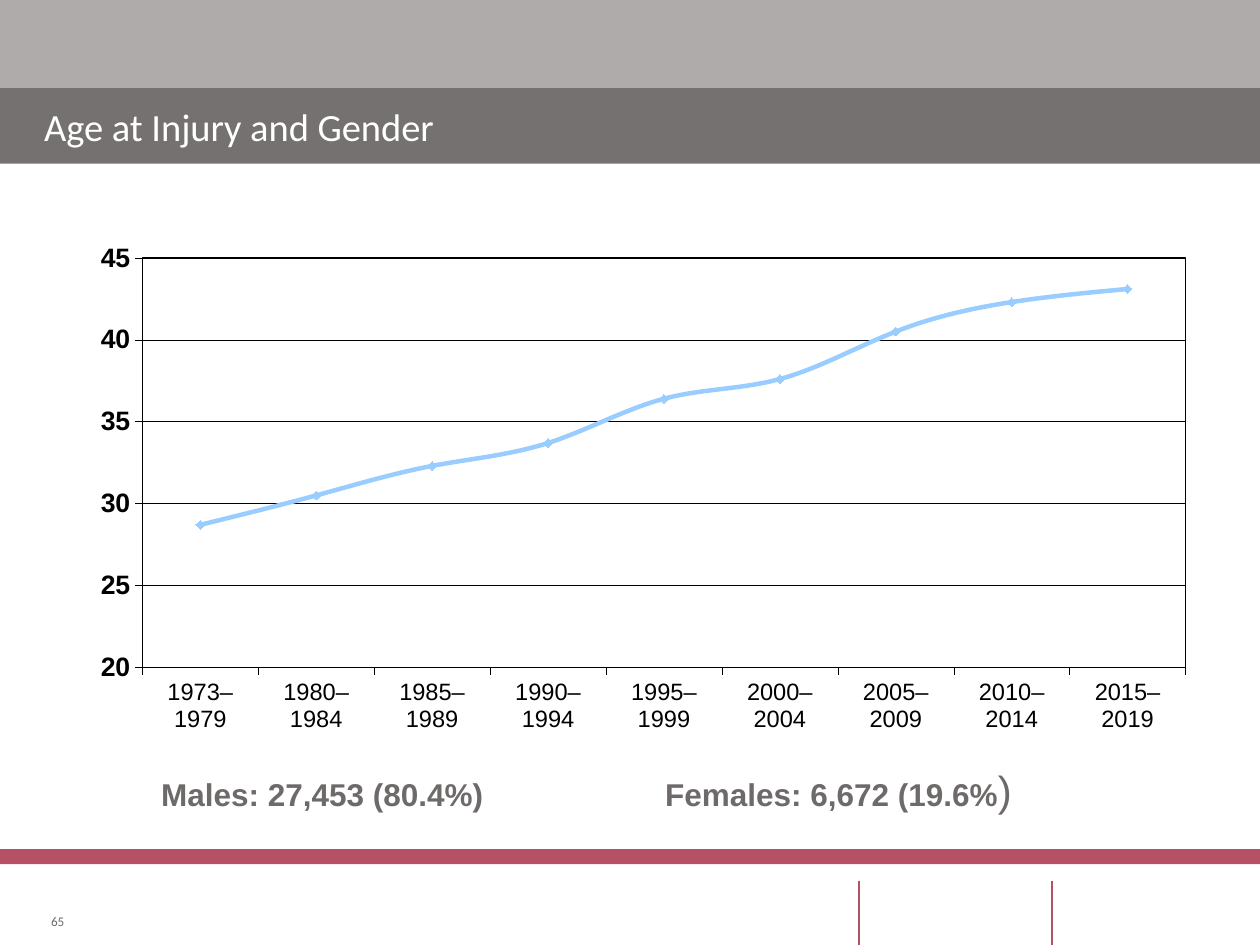
import pptx
import pptx.chart.data
import pptx.dml.color
import pptx.enum.chart
import pptx.enum.shapes
import pptx.enum.text
import pptx.oxml
import pptx.oxml.ns
import pptx.util

Cm = pptx.util.Cm
Pt = pptx.util.Pt
ANCHOR = pptx.enum.text.MSO_ANCHOR
ALIGN = pptx.enum.text.PP_ALIGN
CHART = pptx.enum.chart

ROSE, GREY, BLUE, BLACK = "B65065", "6F6A6A", "99CCFF", "000000"
AGES = {
    "1973–1979": 28.7, "1980–1984": 30.5, "1985–1989": 32.3,
    "1990–1994": 33.7, "1995–1999": 36.4, "2000–2004": 37.6,
    "2005–2009": 40.5, "2010–2014": 42.3, "2015–2019": 43.1,
}
PLOT_LAYOUT = {"x": 0.07, "y": 0.08, "w": 0.92, "h": 0.71}


def paint(color_format, hex_color):
    color_format.rgb = pptx.dml.color.RGBColor.from_string(hex_color)


def set_all(target, values):
    for name, value in values.items():
        setattr(target, name, value)


def set_font(font, hex_color, **values):
    set_all(font, values)
    paint(font.color, hex_color)


def set_line(line, hex_color, width):
    line.width = Pt(width)
    paint(line.color, hex_color)


def frame_values(left=0, right=0, **values):
    return {"margin_left": Cm(left), "margin_right": Cm(right),
            "margin_top": 0, "margin_bottom": 0, **values}


def xml(markup):
    return pptx.oxml.parse_xml(
        markup.replace(">", f" {pptx.oxml.ns.nsdecls('a', 'c')}>", 1))


def add_bands(slide, left, top, width):
    for offset, height, color in [(0, 1.8, "AFABAB"), (1.78, 1.52, "767171"),
                                  (17.12, 0.3, ROSE)]:
        band = slide.shapes.add_shape(
            pptx.enum.shapes.MSO_SHAPE.RECTANGLE,
            Cm(left), Cm(top + offset), Cm(width), Cm(height))
        band.shadow.inherit = False
        band.fill.solid()
        paint(band.fill.fore_color, color)
        band.line.fill.background()


def add_footer(slide, left, top, height, number):
    for offset in (17.32, 21.21):
        divider = slide.shapes.add_connector(
            pptx.enum.shapes.MSO_CONNECTOR.STRAIGHT,
            Cm(left + offset), Cm(top), Cm(left + offset), Cm(top + height))
        set_line(divider.line, ROSE, 1.5)
        divider.element.spPr.append(xml("<a:effectLst></a:effectLst>"))
    page = slide.shapes.add_textbox(
        Cm(left + 0.97), Cm(top + 0.66), Cm(0.33), Cm(0.33)).text_frame
    set_all(page, frame_values(word_wrap=False, vertical_anchor=ANCHOR.BOTTOM))
    paragraph = page.paragraphs[0]
    paragraph.text = number
    paragraph.alignment = ALIGN.RIGHT
    set_font(paragraph.runs[0].font, GREY, name="Calibri", size=Pt(7.5))


def place_title(slide, left, top, width, height, wording):
    title = slide.shapes.title
    title.element.getparent().append(title.element)
    set_all(title, {"left": Cm(left), "top": Cm(top),
                    "width": Cm(width), "height": Cm(height)})
    set_all(title.text_frame, frame_values(
        0.89, 0.89, word_wrap=True, vertical_anchor=ANCHOR.MIDDLE))
    paragraph = title.text_frame.paragraphs[0]
    paragraph.text = wording
    paragraph.alignment = ALIGN.LEFT
    set_font(paragraph.runs[0].font, "FFFFFF", name="Calibri", size=Pt(22),
             bold=False)


def frame_plot(chart):
    plot_area = chart.element.xpath("c:chart/c:plotArea")[0]
    for layout in plot_area.xpath("c:layout"):
        plot_area.remove(layout)
    edges = "".join(f'<c:{side} val="{share}"/>'
                    for side, share in PLOT_LAYOUT.items())
    plot_area.insert(0, xml(
        '<c:layout><c:manualLayout><c:layoutTarget val="inner"/>'
        '<c:xMode val="edge"/><c:yMode val="edge"/>'
        f'{edges}</c:manualLayout></c:layout>'))
    plot_area.append(xml(
        '<c:spPr><a:noFill/><a:ln w="12700"><a:solidFill>'
        f'<a:srgbClr val="{BLACK}"/></a:solidFill></a:ln></c:spPr>'))


def add_age_chart(slide, left, top, width, height):
    age_data = pptx.chart.data.CategoryChartData()
    age_data.categories = list(AGES)
    age_data.add_series("Series 1", list(AGES.values()))
    chart = slide.shapes.add_chart(
        CHART.XL_CHART_TYPE.LINE_MARKERS,
        Cm(left), Cm(top), Cm(width), Cm(height), age_data).chart
    set_all(chart, {"has_title": False, "has_legend": False})
    set_font(chart.font, BLACK, name="Arial", size=Pt(15.2), bold=True)

    for axis, size, bold in [(chart.category_axis, 13.5, False),
                             (chart.value_axis, 15.2, True)]:
        set_all(axis, {"major_tick_mark": CHART.XL_TICK_MARK.OUTSIDE,
                       "minor_tick_mark": CHART.XL_TICK_MARK.NONE})
        set_line(axis.format.line, BLACK, 0.21)
        set_font(axis.tick_labels.font, BLACK, name="Arial", size=Pt(size),
                 bold=bold)
    set_all(chart.value_axis, {"minimum_scale": 20, "maximum_scale": 45,
                               "major_unit": 5, "has_major_gridlines": True})
    set_line(chart.value_axis.major_gridlines.format.line, BLACK, 0.21)

    chart.plots[0].vary_by_categories = False
    age_series = chart.plots[0].series[0]
    age_series.smooth = True
    set_line(age_series.format.line, BLUE, 2.54)
    marker = age_series.marker
    set_all(marker, {"style": CHART.XL_MARKER_STYLE.DIAMOND, "size": 5})
    marker.format.fill.solid()
    paint(marker.format.fill.fore_color, BLUE)
    paint(marker.format.line.color, BLUE)
    frame_plot(chart)


def add_gender_counts(slide, left, top, width, height):
    counts = slide.shapes.add_textbox(
        Cm(left), Cm(top), Cm(width), Cm(height)).text_frame
    set_all(counts, frame_values(1.52, 0.25, word_wrap=True,
                                 margin_top=Cm(0.13)))
    paragraph = counts.paragraphs[0]
    stops = "".join(f'<a:tab pos="{Cm(stop)}" algn="l"/>'
                    for stop in (7.62, 10.16))
    paragraph.alignment = ALIGN.LEFT
    paragraph.runs
    paragraph._p.get_or_add_pPr().append(xml(f"<a:tabLst>{stops}</a:tabLst>"))
    for wording, size, bold in [
            ("Males: 27,453 (80.4%) \t\tFemales: 6,672 (19.6%", 18, True),
            (")", 24, False)]:
        run = paragraph.add_run()
        run.text = wording
        set_font(run.font, GREY, name="Arial", size=Pt(size), bold=bold)


def main():
    deck = pptx.Presentation()
    set_all(deck, {"slide_width": Cm(25.4), "slide_height": Cm(19.05)})
    slide = deck.slides.add_slide(deck.slide_layouts.get_by_name("Title Only"))
    add_bands(slide, 0, 0, 25.4)
    add_footer(slide, 0, 17.75, 1.3, "65")
    place_title(slide, 0, 1.78, 25.4, 1.52, "Age at Injury and Gender")
    add_age_chart(slide, 1.27, 4.27, 22.86, 11.63)
    add_gender_counts(slide, 1.73, 15.29, 22.4, 1.27)
    deck.save("out.pptx")


if __name__ == "__main__":
    main()
